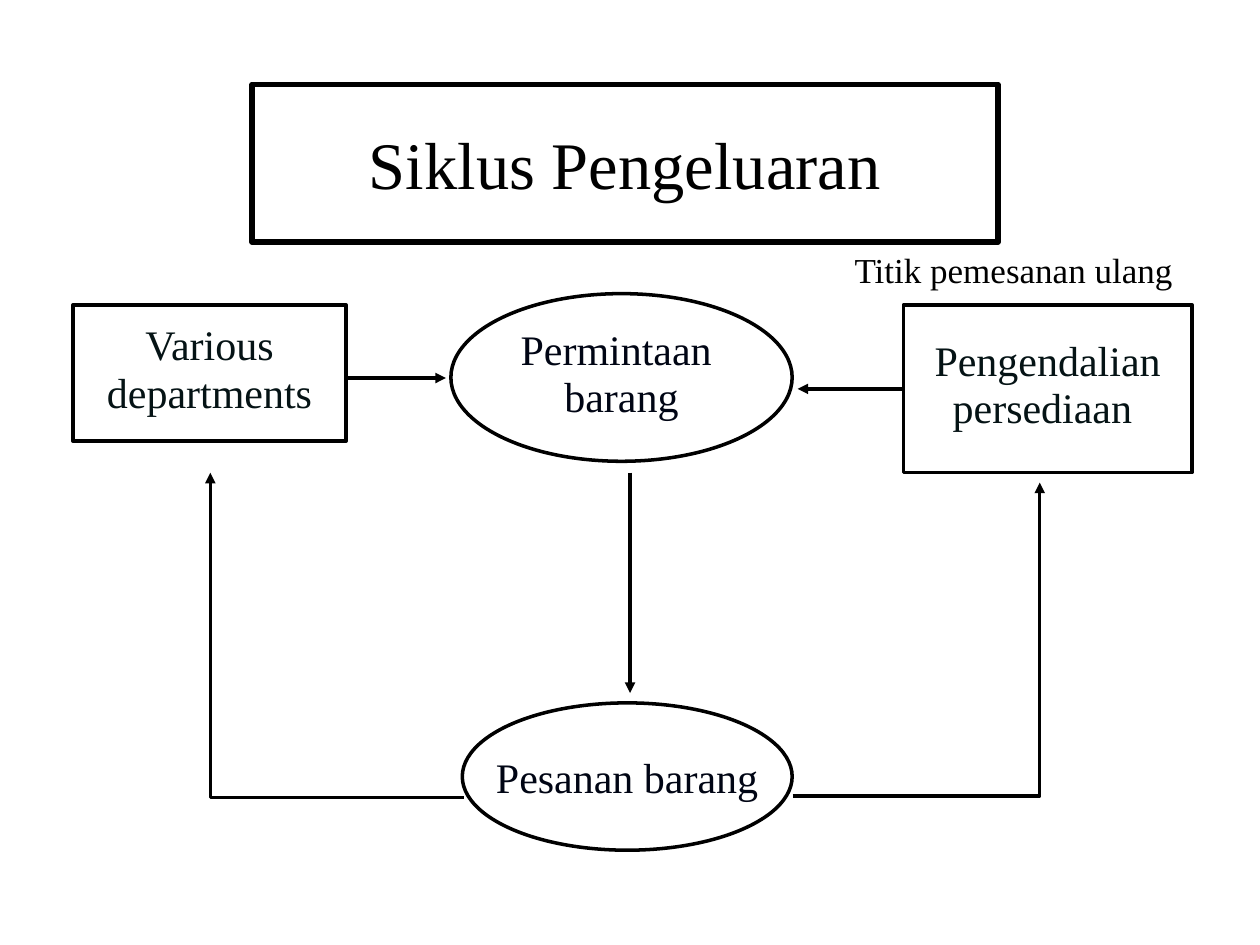
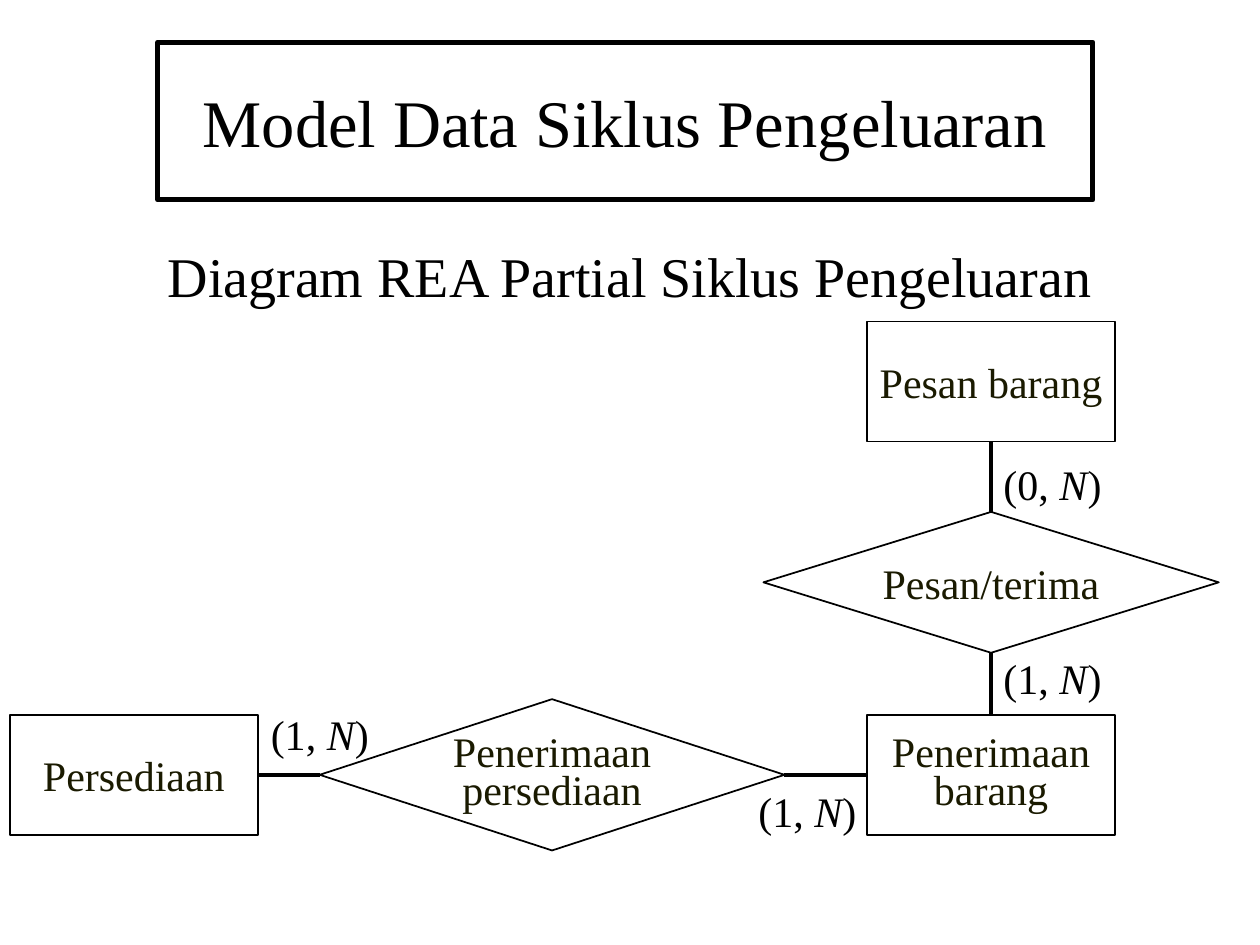
from pptx import Presentation
from pptx.dml.color import RGBColor
from pptx.enum.shapes import MSO_CONNECTOR as Connector, MSO_SHAPE as Shape
from pptx.enum.text import MSO_ANCHOR as Anchor, PP_ALIGN as Align
from pptx.oxml.ns import qn
from pptx.util import Cm, Pt
from lxml.etree import SubElement

FONT = "Times New Roman"
BLACK, WHITE = "000000", "FFFFFF"
PROCESS_INK, DEPARTMENT_INK, ENTITY_INK = "000514", "051315", "1A1A00"
TOP, LEFT, BOTTOM, RIGHT = range(4)

# Slide 2: entities share one size and one column centre
ENTITY_WIDTH, ENTITY_HEIGHT = 5, 2.42
ENTITY_LEFT, ENTITY_TOP = 17.48, 14.41
COLUMN_CENTRE = ENTITY_LEFT + ENTITY_WIDTH / 2


def color(hex_string):
    return RGBColor.from_string(hex_string)


def style_text(paragraph, size, ink=BLACK, align=Align.CENTER):
    paragraph.alignment = align
    for span in paragraph.runs:
        span.font.name = FONT
        span.font.size = Pt(size)
        span.font.color.rgb = color(ink)


def style_line(shape, width, arrow=False):
    shape.line.color.rgb = color(BLACK)
    shape.line.width = Pt(width)
    if arrow:
        line = shape._element.spPr.find(qn("a:ln"))
        SubElement(line, qn("a:tailEnd"), type="triangle")


def place(shape, left, top, width, height):
    shape.left, shape.top = Cm(left), Cm(top)
    shape.width, shape.height = Cm(width), Cm(height)


def add_title(page, text, *bounds):
    title = page.shapes.title
    place(title, *bounds)
    style_line(title, 3)
    title.text_frame.text = text
    title.text_frame.vertical_anchor = Anchor.MIDDLE
    style_text(title.text_frame.paragraphs[0], 38)


def add_subtitle(page, text, *bounds):
    """Fill the body placeholder with one centred line without a bullet."""
    body = page.placeholders[1]
    place(body, *bounds)
    body.text_frame.text = text
    paragraph = body.text_frame.paragraphs[0]
    properties = paragraph._p.get_or_add_pPr()
    properties.set("marL", "0")
    properties.set("indent", "0")
    SubElement(properties, qn("a:buNone"))
    style_text(paragraph, 32)


def add_node(page, kind, text, bounds, ink, line_width, gap=0):
    """Add an outlined shape; gap is the space between its text lines."""
    node = page.shapes.add_shape(kind, *map(Cm, bounds))
    node.shadow.inherit = False
    node.fill.solid()
    node.fill.fore_color.rgb = color(WHITE)
    style_line(node, line_width)
    frame = node.text_frame
    frame.text = text
    frame.word_wrap = False
    frame.vertical_anchor = Anchor.MIDDLE
    for index, paragraph in enumerate(frame.paragraphs):
        style_text(paragraph, 24, ink)
        if len(frame.paragraphs) > 1:
            paragraph.line_spacing = 0.75
        if index:
            paragraph.space_before = Pt(gap)
    return node


def add_label(page, parts, bounds, size, align):
    box = page.shapes.add_textbox(*map(Cm, bounds))
    box.text_frame.word_wrap = True
    paragraph = box.text_frame.paragraphs[0]
    for part in parts:
        span = paragraph.add_run()
        span.text = part
        span.font.italic = part == "N"
    style_text(paragraph, size, align=align)


def add_cardinality(page, minimum, left, top):
    add_label(page, [f"({minimum}, ", "N", ")"], (left, top, 2.69, 1.27), 24, Align.LEFT)


def add_straight(page, start, end, arrow=False):
    line = page.shapes.add_connector(Connector.STRAIGHT, *map(Cm, start + end))
    SubElement(line._element.spPr, qn("a:effectLst"))
    # the line element is inserted ahead of the effect list
    style_line(line, 2, arrow)
    return line


def join(page, first, first_side, second, second_side):
    line = add_straight(page, (0, 0), (0, 0))
    line.begin_connect(first, first_side)
    line.end_connect(second, second_side)


def add_bent_arrow(page, start, corner, end):
    builder = page.shapes.build_freeform(*map(Cm, start))
    builder.add_line_segments([tuple(map(Cm, corner)), tuple(map(Cm, end))], close=False)
    arrow = builder.convert_to_shape()
    arrow.shadow.inherit = False
    arrow.fill.background()
    style_line(arrow, 2, arrow=True)


def build_cycle(deck):
    page = deck.slides.add_slide(deck.slide_layouts[5])
    add_title(page, "Siklus Pengeluaran", 5.08, 1.7, 15.04, 3.18)

    nodes = [
        (Shape.OVAL, "Pesanan barang", (9.32, 14.17, 6.65, 2.97), PROCESS_INK),
        (Shape.OVAL, "Permintaan \nbarang", (9.09, 5.92, 6.88, 3.38), PROCESS_INK),
        (Shape.RECTANGLE, "Various\ndepartments", (1.47, 6.15, 5.51, 2.74), DEPARTMENT_INK),
        (Shape.RECTANGLE, "Pengendalian\npersediaan ", (18.21, 6.15, 5.82, 3.38), DEPARTMENT_INK),
    ]
    for kind, text, bounds, ink in nodes:
        node = add_node(page, kind, text, bounds, ink, 2, gap=5.5)
    inventory_control = node

    add_straight(page, (6.98, 7.62), (8.99, 7.62), arrow=True)
    reorder = add_straight(page, (18.21, 7.84), (16.08, 7.84), arrow=True)
    reorder.begin_connect(inventory_control, LEFT)
    add_straight(page, (12.7, 9.53), (12.7, 13.97), arrow=True)
    add_bent_arrow(page, (9.35, 16.08), (4.24, 16.08), (4.24, 9.53))
    add_bent_arrow(page, (15.98, 16.05), (20.96, 16.05), (20.96, 9.73))
    add_label(page, ["Titik pemesanan ulang"], (16.94, 4.88, 6.99, 1.09), 20, Align.CENTER)


def build_data_model(deck):
    page = deck.slides.add_slide(deck.slide_layouts[1])
    add_title(page, "Model Data Siklus Pengeluaran", 3.18, 0.85, 18.85, 3.18)
    add_subtitle(page, "Diagram REA Partial Siklus Pengeluaran", 1.91, 4.75, 21.59, 12.27)

    def entity(text, left, top):
        bounds = (left, top, ENTITY_WIDTH, ENTITY_HEIGHT)
        return add_node(page, Shape.RECTANGLE, text, bounds, ENTITY_INK, 1)

    def relation(text, centre_x, centre_y, width, height):
        bounds = (centre_x - width / 2, centre_y - height / 2, width, height)
        return add_node(page, Shape.DIAMOND, text, bounds, ENTITY_INK, 1)

    row_centre = ENTITY_TOP + ENTITY_HEIGHT / 2
    inventory = entity("Persediaan", 0.2, ENTITY_TOP)
    stock_receipt = relation("Penerimaan\npersediaan", 11.13, row_centre, 9.37, 3.05)
    receipt = entity("Penerimaan\nbarang", ENTITY_LEFT, ENTITY_TOP)
    order = entity("Pesan barang", ENTITY_LEFT, 6.48)
    order_receipt = relation("Pesan/terima", COLUMN_CENTRE, 11.74, 9.18, 2.84)

    join(page, order_receipt, TOP, order, BOTTOM)
    join(page, receipt, TOP, order_receipt, BOTTOM)
    join(page, stock_receipt, RIGHT, receipt, LEFT)
    join(page, stock_receipt, LEFT, inventory, RIGHT)

    add_cardinality(page, 1, 5.21, 14.15)
    add_cardinality(page, 1, 15.04, 15.72)
    add_cardinality(page, 0, COLUMN_CENTRE, 9.12)
    add_cardinality(page, 1, COLUMN_CENTRE, 13.03)


def main():
    deck = Presentation()
    deck.slide_width, deck.slide_height = Cm(25.4), Cm(19.05)
    build_cycle(deck)
    build_data_model(deck)
    deck.save("out.pptx")


if __name__ == "__main__":
    main()
